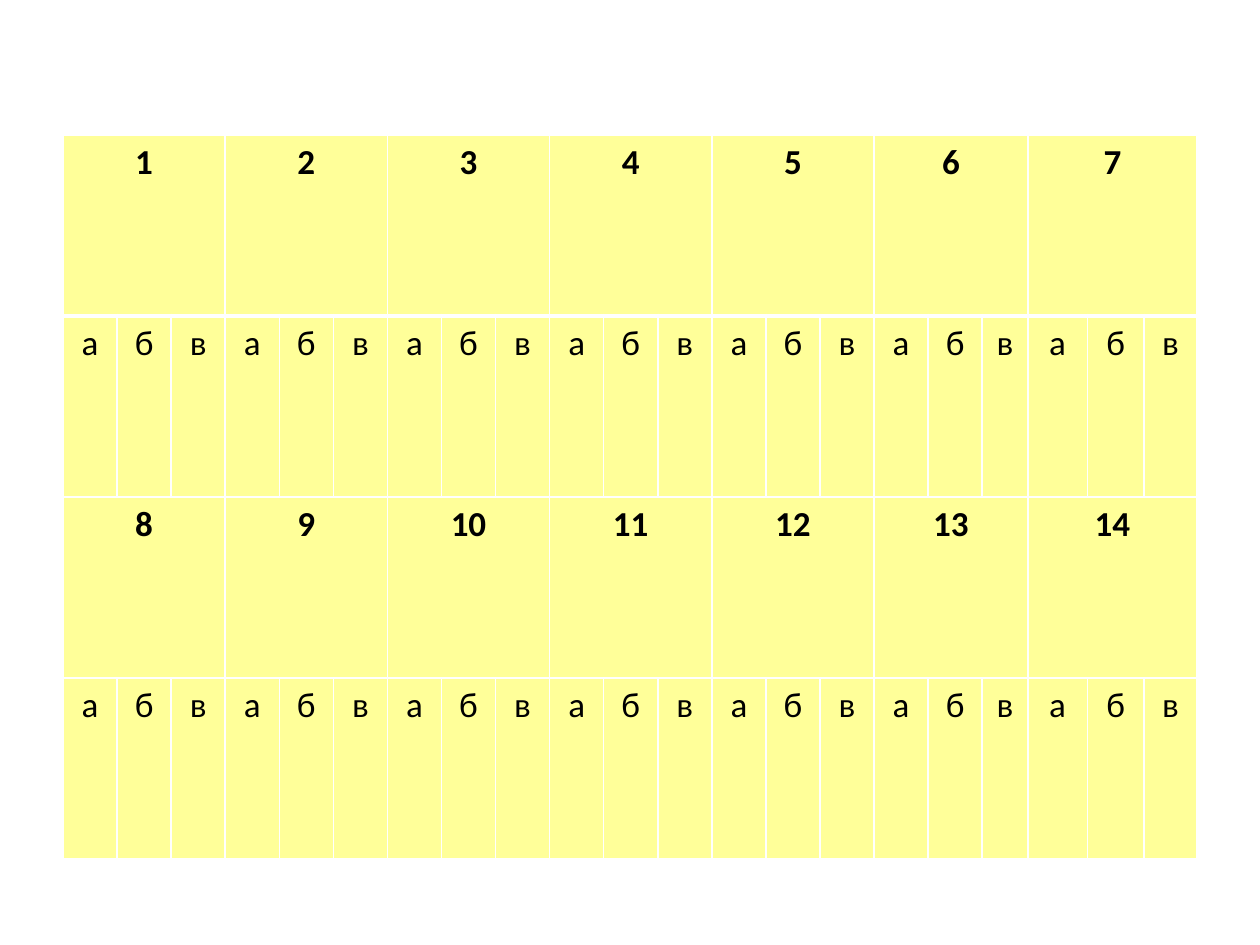
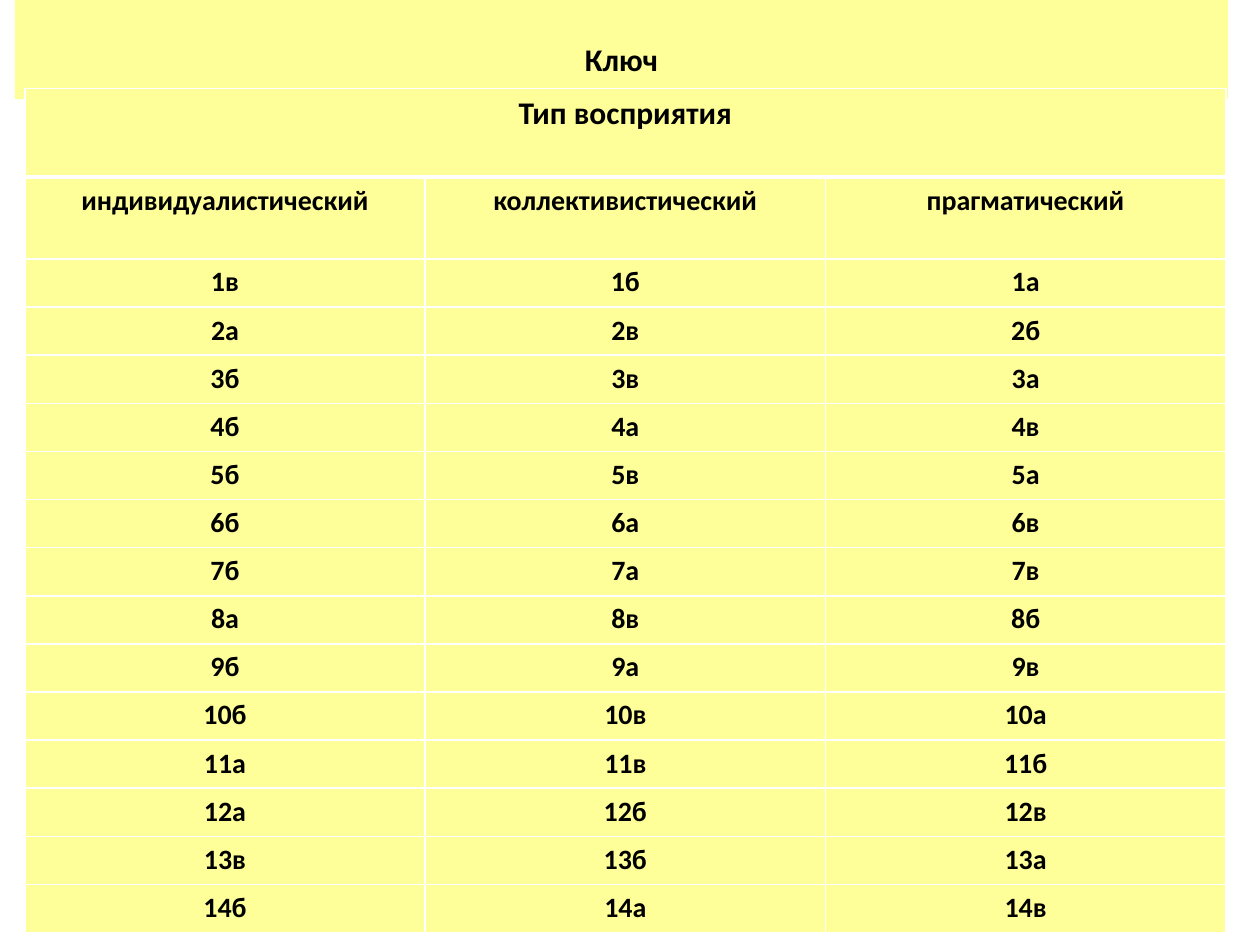
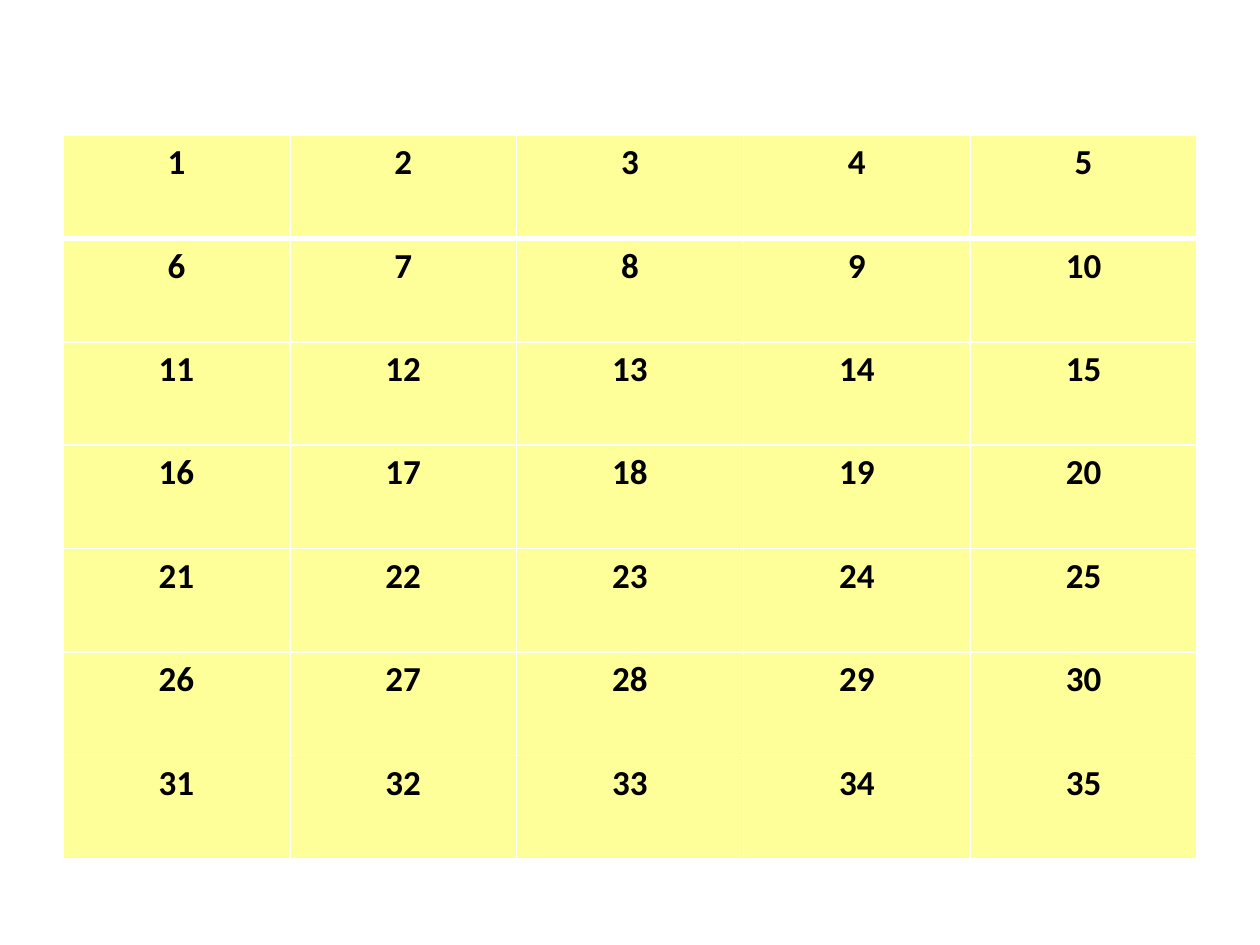
from dataclasses import dataclass

from lxml.etree import SubElement
from pptx import Presentation
from pptx.dml.color import RGBColor
from pptx.enum.shapes import MSO_SHAPE as Preset
from pptx.enum.text import MSO_ANCHOR as Anchor, PP_ALIGN as Align
from pptx.oxml.ns import qn
from pptx.util import Cm, Pt


@dataclass(frozen=True)
class Theme:
    font: str = "Calibri"
    paper: str = "FFFF99"
    ink: str = "000000"
    rule: str = "FFFFFF"
    number_size: int = 20
    heading_size: int = 18
    key_size: int = 16
    thin: int = 1
    thick: int = 3


THEME = Theme()

BLANK_LAYOUT = 6
FORM_LEFT, FORM_TOP = 1.27, 2.72
FORM_WIDTH, FORM_HEIGHT = 22.86, 14.6

LETTERS = "абв"
QUESTIONS_PER_ROW = 7
ANSWER_WIDTHS = [1.09] * 17 + [0.92, 1.2, 1.14, 1.07]

PERCEPTION_TYPES = ["индивидуалистический", "коллективистический", "прагматический"]
# One group of letters per question, in the order of the perception types.
KEY_LETTERS = "вба авб бва бав бва бав бав авб бав бва авб абв вба бав".split()


def write(frame, text, size=THEME.number_size, bold=True, align=Align.CENTER):
    paragraph = frame.paragraphs[0]
    paragraph.alignment = align
    run = paragraph.add_run()
    run.text = text
    run.font.name = THEME.font
    run.font.size = Pt(size)
    run.font.bold = bold
    run.font.color.rgb = RGBColor.from_string(THEME.ink)


def paint(target, color):
    target.fill.solid()
    target.fill.fore_color.rgb = RGBColor.from_string(color)


def rule_cell(cell, row_index):
    """Draw the cell borders; the rule under the first row is thick."""
    properties = cell._tc.get_or_add_tcPr()
    widths = {
        "a:lnL": THEME.thin,
        "a:lnR": THEME.thin,
        "a:lnT": THEME.thick if row_index == 1 else THEME.thin,
        "a:lnB": THEME.thick if row_index == 0 else THEME.thin,
    }
    for tag, width in widths.items():
        line = SubElement(properties, qn(tag), w=str(Pt(width)))
        fill = SubElement(line, qn("a:solidFill"))
        SubElement(fill, qn("a:srgbClr"), val=THEME.rule)


def add_grid(slide, left, top, widths, heights):
    """Add an empty table in the shared style, with lengths in centimetres."""
    grid = slide.shapes.add_table(
        len(heights), len(widths), Cm(left), Cm(top), Cm(sum(widths)), Cm(sum(heights))
    ).table
    grid.horz_banding = False
    for column, width in zip(grid.columns, widths):
        column.width = Cm(width)
    for row_index, (row, height) in enumerate(zip(grid.rows, heights)):
        row.height = Cm(height)
        for cell in row.cells:
            rule_cell(cell, row_index)
            paint(cell, THEME.paper)
    return grid


def add_heading_band(slide, text):
    band = slide.shapes.add_shape(Preset.RECTANGLE, Cm(0.3), 0, Cm(24.46), Cm(2))
    band.shadow.inherit = False
    paint(band, THEME.paper)
    band.line.fill.background()
    frame = band.text_frame
    frame.word_wrap = True
    frame.vertical_anchor = Anchor.BOTTOM
    frame.margin_bottom = Cm(0.43)
    write(frame, text, size=THEME.heading_size)


def build_answer_form(slide):
    form = add_grid(slide, FORM_LEFT, FORM_TOP, ANSWER_WIDTHS, [FORM_HEIGHT / 4] * 4)
    choices = len(LETTERS)
    for question in range(2 * QUESTIONS_PER_ROW):
        block, position = divmod(question, QUESTIONS_PER_ROW)
        row, first = 2 * block, choices * position
        number = form.cell(row, first)
        number.merge(form.cell(row, first + choices - 1))
        write(number.text_frame, str(question + 1))
        for offset, letter in enumerate(LETTERS):
            write(form.cell(row + 1, first + offset).text_frame, letter, bold=False)


def build_key(slide):
    add_heading_band(slide, "Ключ")
    heights = [1.79, 1.65] + [0.97] * len(KEY_LETTERS)
    key = add_grid(slide, 0.5, 1.78, [8.07] * len(PERCEPTION_TYPES), heights)
    heading = key.cell(0, 0)
    heading.merge(key.cell(0, len(PERCEPTION_TYPES) - 1))
    write(heading.text_frame, "Тип восприятия", size=THEME.heading_size)
    answers = [
        [f"{number}{letter}" for letter in letters]
        for number, letters in enumerate(KEY_LETTERS, 1)
    ]
    for row, texts in enumerate([PERCEPTION_TYPES] + answers, 1):
        for column, text in enumerate(texts):
            write(key.cell(row, column).text_frame, text, size=THEME.key_size)


def build_number_form(slide, rows=7, columns=5):
    form = add_grid(
        slide,
        FORM_LEFT,
        FORM_TOP,
        [FORM_WIDTH / columns] * columns,
        [FORM_HEIGHT / rows] * rows,
    )
    for number, cell in enumerate(form.iter_cells(), 1):
        write(cell.text_frame, str(number))


def main():
    deck = Presentation()
    deck.slide_width, deck.slide_height = Cm(25.4), Cm(19.05)
    for build in (build_answer_form, build_key, build_number_form):
        build(deck.slides.add_slide(deck.slide_layouts[BLANK_LAYOUT]))
    deck.save("out.pptx")


if __name__ == "__main__":
    main()
